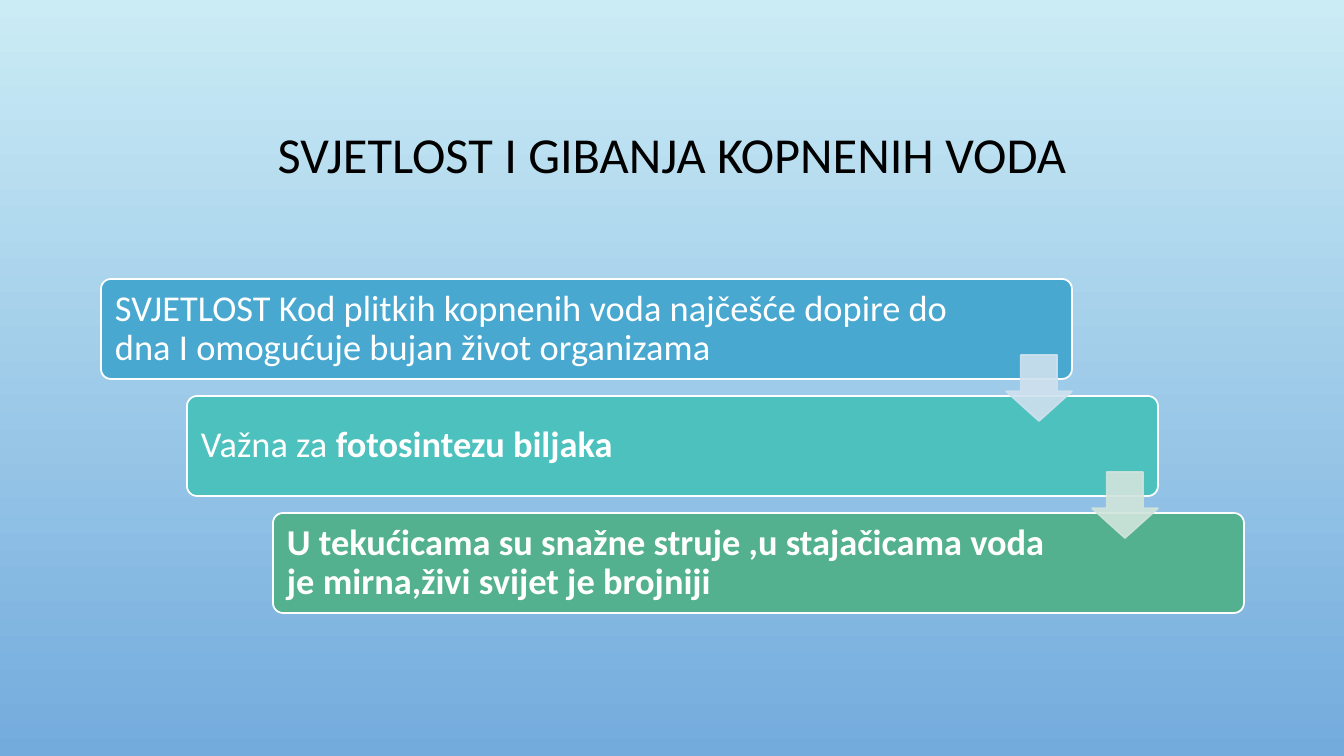
from lxml.etree import SubElement
from pptx import Presentation
from pptx.dml.color import RGBColor
from pptx.enum.shapes import MSO_SHAPE as Shape
from pptx.enum.text import MSO_ANCHOR as Anchor, PP_ALIGN as Align
from pptx.oxml.ns import qn
from pptx.util import Pt

PX = 914400 / 100.8
COLORS = {
    "sky": "CBECF5", "deep": "73ABDD", "title": "000000", "white": "FFFFFF",
    "light": "48A8D0", "plants": "4DC1BD", "currents": "53B18F",
    "first_arrow": "CFE1EE", "second_arrow": "D1E4DB",
}
STEPS = [
    ("light", 863, [("SVJETLOST Kod plitkih kopnenih voda najčešće dopire do "
                     "dna I omogućuje bujan život organizama", False)]),
    ("plants", 814, [("Važna za ", False), ("fotosintezu biljaka", True)]),
    ("currents", 814, [("U tekućicama su snažne struje ,u stajačicama voda "
                        "je mirna,živi svijet je brojniji", True)]),
]
ARROWS = ["first_arrow", "second_arrow"]


def px(*lengths):
    return [round(length * PX) for length in lengths]


def rgb(name):
    return RGBColor.from_string(COLORS[name])


def apply_format(target, values):
    for name, value in values.items():
        setattr(target, name, value)


def add_text(slide, box, runs, size, color, align, inset):
    text_box = slide.shapes.add_textbox(*px(*box))
    frame = text_box.text_frame
    margin = px(inset)[0]
    apply_format(frame, {
        "word_wrap": True, "vertical_anchor": Anchor.MIDDLE,
        "margin_left": margin, "margin_right": margin,
        "margin_top": margin, "margin_bottom": margin,
    })
    paragraph = frame.paragraphs[0]
    apply_format(paragraph, {"alignment": align, "line_spacing": 0.9})
    for text, bold in runs:
        run = paragraph.add_run()
        run.text = text
        apply_format(run.font, {"name": "Calibri", "size": Pt(size), "bold": bold})
        run.font.color.rgb = rgb(color)


def add_block(slide, kind, box, adjustments, fill, line):
    shape = slide.shapes.add_shape(kind, *px(*box))
    shape.shadow.inherit = False
    for index, value in enumerate(adjustments):
        shape.adjustments[index] = value
    shape.fill.solid()
    shape.fill.fore_color.rgb = rgb(fill)
    shape.line.color.rgb = rgb(line)
    shape.line.width = Pt(1.25)
    return shape


def add_arrow(slide, box, color):
    arrow = add_block(slide, Shape.DOWN_ARROW, box, [0.55, 0.45], color, color)
    for element in list(arrow._element.spPr.iter(qn("a:srgbClr"))):
        SubElement(element, qn("a:alpha"), val="90000")


def add_staircase(slide, box):
    left, top, width, height = box
    step_x, step_y, card_height, arrow_size = 86, 117, 100, 66
    card_width = width - step_x * (len(STEPS) - 1)
    for index, (color, text_width, runs) in enumerate(STEPS):
        x, y = left + index * step_x, top + index * step_y
        add_block(slide, Shape.ROUNDED_RECTANGLE, (x, y, card_width, card_height),
                  [0.1], color, "white")
        add_text(slide, (x + 3, y + 3, text_width, card_height - 6),
                 runs, 26, "white", Align.LEFT, 11)
    for index, color in enumerate(ARROWS):
        x = left + index * step_x + card_width - arrow_size
        y = top + index * step_y + 76
        add_arrow(slide, (x, y, arrow_size, arrow_size), color)


def add_background(slide):
    fill = slide.background.fill
    fill.gradient()
    fill.gradient_angle = 270
    for stop, position, color in zip(fill.gradient_stops, (0, 1), ("sky", "deep")):
        stop.position = position
        stop.color.rgb = rgb(color)


def main():
    """Build the slide on light and movement of inland waters."""
    presentation = Presentation()
    presentation.slide_width, presentation.slide_height = px(1344, 756)
    slide = presentation.slides.add_slide(presentation.slide_layouts[6])
    add_background(slide)
    add_text(slide, (101, 69, 1142, 176), [("SVJETLOST I GIBANJA KOPNENIH VODA", False)],
             36, "title", Align.CENTER, 5)
    add_staircase(slide, (101, 279, 1143, 334))
    presentation.save("out.pptx")


if __name__ == "__main__":
    main()
